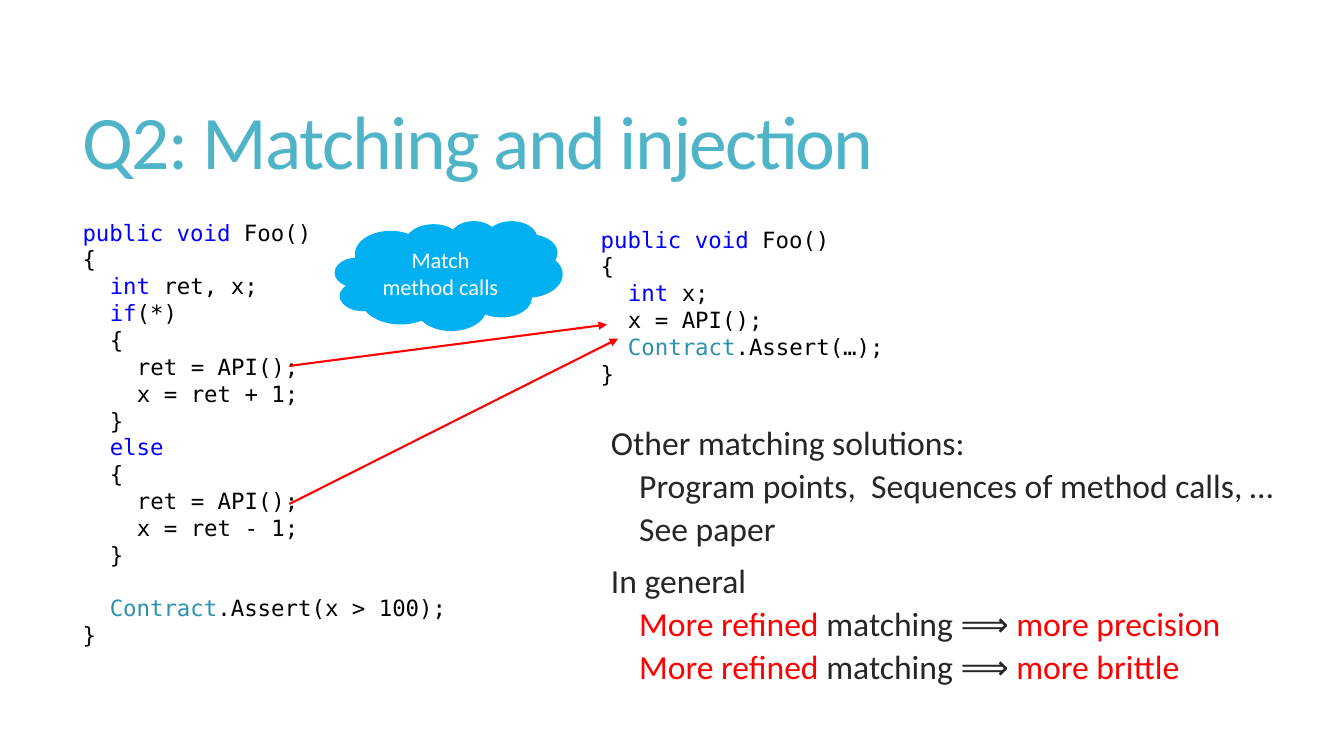
from lxml import etree
from pptx import Presentation
from pptx.dml.color import RGBColor
from pptx.enum.dml import MSO_FILL
from pptx.enum.shapes import MSO_CONNECTOR, MSO_SHAPE
from pptx.enum.text import MSO_ANCHOR, MSO_AUTO_SIZE, PP_ALIGN
from pptx.oxml.ns import qn
from pptx.util import Inches, Pt

STRAIGHT = MSO_CONNECTOR.STRAIGHT
CLOUD = MSO_SHAPE.CLOUD
TOP, MIDDLE = MSO_ANCHOR.TOP, MSO_ANCHOR.MIDDLE
LEFT, CENTER = PP_ALIGN.LEFT, PP_ALIGN.CENTER

SANS, MONO = "Calibri", "DejaVu Sans Mono"
BLACK, WHITE, DARK = "000000", "FFFFFF", "262626"
KEYWORD, TYPE, RED = "0000FF", "2B91AF", "FF0000"
TEAL, SKY = "50B4C8", "00B0F0"

TITLE = "Q2: Matching and injection"
CLOUD_TEXT = "Match method calls"

# Each line: indent level, then spans of (text, colour)
SIGNATURE = (0, ("public", KEYWORD), (" ", BLACK), ("void", KEYWORD), (" Foo()", BLACK))
BRANCHING_CODE = [
    SIGNATURE,
    (0, ("{", BLACK)),
    (1, ("int", KEYWORD), (" ret, x;", BLACK)),
    (1, ("if", KEYWORD), ("(*)", BLACK)),
    (1, ("{", BLACK)),
    (2, ("ret = API();", BLACK)),
    (2, ("x = ret + 1;", BLACK)),
    (1, ("}", BLACK)),
    (1, ("else", KEYWORD)),
    (1, ("{", BLACK)),
    (2, ("ret = API();", BLACK)),
    (2, ("x = ret - 1;", BLACK)),
    (1, ("}", BLACK)),
    (1, ("Contract", TYPE), (".Assert(x > 100);", BLACK)),
    (0, ("}", BLACK)),
]
SIMPLE_CODE = [
    SIGNATURE,
    (0, ("{", BLACK)),
    (1, ("int", KEYWORD), (" x;", BLACK)),
    (1, ("x = API();", BLACK)),
    (1, ("Contract", TYPE), (".Assert(…);", BLACK)),
    (0, ("}", BLACK)),
]
SOLUTIONS = [
    (0, ("Other matching solutions:", DARK)),
    (1, ("Program points,  Sequences of method calls, …", DARK)),
    (1, ("See paper", DARK)),
    (0, ("In general", DARK)),
    (1, ("More refined", RED), (" matching ⟹ ", DARK), ("more precision", RED)),
    (1, ("More refined", RED), (" matching ⟹ ", DARK), ("more brittle", RED)),
]

# Code boxes: lines, place, index of the line that follows a gap
CODE_BOXES = [
    (BRANCHING_CODE, (0.72, 2.12, 4.02, 4.41), 13),
    (SIMPLE_CODE, (5.86, 2.19, 3.81, 1.72), None),
]
CALL_ARROWS = [((2.87, 3.63), (6.02, 3.22)), ((2.87, 5), (6.13, 3.36))]
CODE_INDENT = 0.27
CODE_LINE = 18.6
BODY_INDENTS = (0.1, 0.38)
BODY_GAPS = (13, 6)


def color(value):
    return RGBColor.from_string(value)


def inches(values):
    return [Inches(value) for value in values]


def place(shape, box):
    shape.left, shape.top, shape.width, shape.height = inches(box)


def write_para(para, spans, size, font, align=LEFT, indent=0, before=0, spacing=None):
    para.alignment = align
    para.space_before = Pt(before)
    if spacing:
        para.line_spacing = spacing
    properties = para._p.get_or_add_pPr()
    properties.set("marL", str(Inches(indent)))
    properties.set("indent", "0")
    etree.SubElement(properties, qn("a:buNone"))
    for text, ink in spans:
        span = para.add_run()
        span.text = text
        span.font.size = Pt(size)
        span.font.name = font
        span.font.color.rgb = color(ink)


def prepare_frame(shape, anchor=TOP):
    frame = shape.text_frame
    frame.word_wrap = True
    frame.auto_size = MSO_AUTO_SIZE.NONE
    frame.vertical_anchor = anchor
    return frame


def paragraphs(frame, count):
    """Return the first paragraph followed by newly added ones."""
    return [frame.paragraphs[0]] + [frame.add_paragraph() for _ in range(count - 1)]


def add_code(page, lines, box, gap_line):
    frame = prepare_frame(page.shapes.add_textbox(*inches(box)))
    for index, para in enumerate(paragraphs(frame, len(lines))):
        level, *spans = lines[index]
        write_para(para, spans, 16, MONO, indent=level * CODE_INDENT,
                   before=CODE_LINE if index == gap_line else 0)


def add_arrow(page, start, end):
    arrow = page.shapes.add_connector(STRAIGHT, *inches(start + end))
    arrow.line.color.rgb = color(RED)
    arrow.line.width = Pt(1.5)
    etree.SubElement(arrow.line._get_or_add_ln(), qn("a:tailEnd"), type="triangle")
    etree.SubElement(arrow._element.spPr, qn("a:effectLst"))


def add_cloud(page):
    cloud = page.shapes.add_shape(CLOUD, *inches((3.32, 2.19, 2.26, 1.09)))
    cloud.shadow.inherit = False
    cloud.fill.solid()
    cloud.fill.fore_color.rgb = color(SKY)
    cloud.line.fill.background()
    para = prepare_frame(cloud, MIDDLE).paragraphs[0]
    write_para(para, [(CLOUD_TEXT, WHITE)], 16, SANS, align=CENTER)


def fill_title(title):
    place(title, (0.72, 0.55, 11.78, 1.81))
    para = prepare_frame(title, MIDDLE).paragraphs[0]
    write_para(para, [(TITLE, TEAL)], 54, SANS, spacing=0.85)
    para.runs[0].font._element.set("spc", "-120")


def fill_body(body):
    place(body, (5.86, 4.2, 7.23, 2.86))
    frame = prepare_frame(body)
    for para, (level, *spans) in zip(paragraphs(frame, len(SOLUTIONS)), SOLUTIONS):
        para.level = level
        write_para(para, spans, 24, SANS, indent=BODY_INDENTS[level],
                   before=BODY_GAPS[level], spacing=0.85)


def main():
    deck = Presentation()
    deck.slide_width, deck.slide_height = inches((13.33, 7.5))
    page = deck.slides.add_slide(deck.slide_layouts[1])
    fill_title(page.shapes.title)
    fill_body(page.placeholders[1])
    for lines, box, gap_line in CODE_BOXES:
        add_code(page, lines, box, gap_line)
    for start, end in CALL_ARROWS:
        add_arrow(page, start, end)
    add_cloud(page)
    deck.save("out.pptx")


if __name__ == "__main__":
    main()
